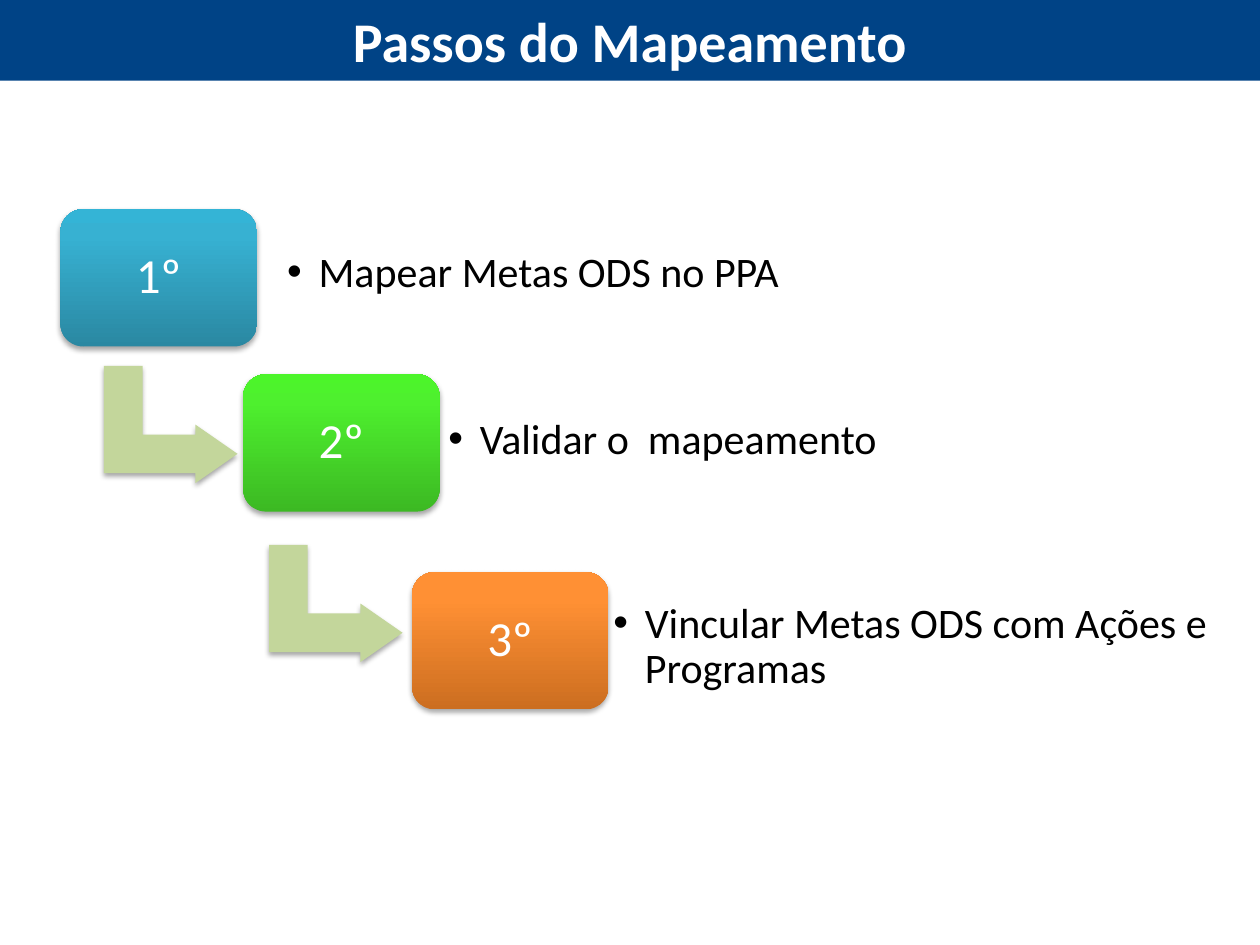
from copy import deepcopy

from pptx import Presentation
from pptx.dml.color import RGBColor
from pptx.enum.shapes import MSO_SHAPE
from pptx.enum.text import MSO_ANCHOR, PP_ALIGN
from pptx.oxml.ns import qn
from pptx.util import Inches, Pt
from lxml import etree

ROUNDED = MSO_SHAPE.ROUNDED_RECTANGLE
BENT_ARROW = MSO_SHAPE.BENT_UP_ARROW
MIDDLE = MSO_ANCHOR.MIDDLE
CENTER = PP_ALIGN.CENTER

WHITE = RGBColor(0xFF, 0xFF, 0xFF)
BLACK = RGBColor(0x00, 0x00, 0x00)
NAVY = RGBColor(0x00, 0x43, 0x86)
SAGE = RGBColor(0xC3, 0xD6, 0x9B)
BLUES = (RGBColor(0x2A, 0x88, 0xA2), RGBColor(0x37, 0xB1, 0xD2), RGBColor(0x34, 0xB4, 0xD6))
GREENS = (RGBColor(0x3C, 0xB9, 0x23), RGBColor(0x4E, 0xF0, 0x2E), RGBColor(0x4C, 0xF5, 0x2A))
ORANGES = (RGBColor(0xCC, 0x6E, 0x20), RGBColor(0xFF, 0x90, 0x34), RGBColor(0xFF, 0x91, 0x36))

FONT = "Calibri"
STOP_POSITIONS = (0, 0.8, 1)
STEPS = [
    ("1º", (0.48, 1.66), BLUES, "Mapear Metas ODS no PPA", (2.18, 1.73, 4.68)),
    ("2º", (1.93, 2.97), GREENS, "Validar o  mapeamento", (3.46, 3.06, 4.74)),
    ("3º", (3.27, 4.54), ORANGES, "Vincular Metas ODS com Ações e Programas", (4.77, 4.7, 4.96)),
]
ARROWS = [(0.89, 2.84), (2.2, 4.26)]


def format_text(shape, size, color, margin, bold=False):
    frame = shape.text_frame
    frame.word_wrap = True
    frame.vertical_anchor = MIDDLE
    frame.margin_left = frame.margin_right = Inches(margin)
    frame.margin_top = frame.margin_bottom = Inches(margin)
    paragraph = frame.paragraphs[0]
    font = paragraph.runs[0].font
    font.name = FONT
    font.size = Pt(size)
    font.bold = bold
    font.color.rgb = color
    return paragraph


def add_soft_shadow(shape):
    shape.shadow.inherit = False
    effects = shape._element.spPr.find(qn("a:effectLst"))
    shadow = etree.SubElement(
        effects, qn("a:outerShdw"), blurRad=str(Pt(3.1)), dist=str(Pt(1.8)),
        dir="5400000", rotWithShape="0")
    color = etree.SubElement(shadow, qn("a:srgbClr"), val="000000")
    etree.SubElement(color, qn("a:alpha"), val="35000")


def fill_gradient(shape, colors):
    fill = shape.fill
    fill.gradient()
    fill.gradient_angle = 90
    stop_list = shape._element.spPr.find(".//" + qn("a:gsLst"))
    stop_list.append(deepcopy(stop_list[-1]))
    for stop, color, position in zip(fill.gradient_stops, colors, STOP_POSITIONS):
        stop.color.rgb = color
        stop.position = position


def set_title(slide, text):
    title = slide.shapes.title
    title.left, title.top = Inches(0), Inches(0)
    title.width, title.height = Inches(10), Inches(0.64)
    title.fill.solid()
    title.fill.fore_color.rgb = NAVY
    title.text_frame.text = text
    format_text(title, 32, WHITE, 0.05, bold=True).alignment = CENTER


def add_arrow(slide, left, top):
    arrow = slide.shapes.add_shape(
        BENT_ARROW, Inches(left), Inches(top), Inches(0.93), Inches(1.06))
    arrow.rotation = 90
    for index, value in enumerate((0.33, 0.25, 0.36)):
        arrow.adjustments[index] = value
    arrow.fill.solid()
    arrow.fill.fore_color.rgb = SAGE
    arrow.line.fill.background()
    add_soft_shadow(arrow)


def add_step_box(slide, number, left, top, colors):
    box = slide.shapes.add_shape(
        ROUNDED, Inches(left), Inches(top), Inches(1.56), Inches(1.09))
    fill_gradient(box, colors)
    box.line.fill.background()
    add_soft_shadow(box)
    box.text_frame.text = number
    paragraph = format_text(box, 28, WHITE, 0.12)
    paragraph.alignment = CENTER
    paragraph.line_spacing = 0.9


def add_description(slide, text, left, top, width):
    description = slide.shapes.add_textbox(
        Inches(left), Inches(top), Inches(width), Inches(0.88))
    description.text_frame.text = text
    paragraph = format_text(description, 24, BLACK, 0.1)
    paragraph.line_spacing = 0.9
    properties = paragraph._p.get_or_add_pPr()
    properties.set("marL", str(Inches(0.25)))
    properties.set("indent", str(Inches(-0.25)))
    etree.SubElement(properties, qn("a:buFont"), typeface="Arial")
    etree.SubElement(properties, qn("a:buChar"), char="•")


def main():
    presentation = Presentation()
    presentation.slide_width = Inches(10)
    presentation.slide_height = Inches(7.5)
    slide = presentation.slides.add_slide(presentation.slide_layouts[5])
    set_title(slide, "Passos do Mapeamento")
    for left, top in ARROWS:
        add_arrow(slide, left, top)
    for number, box_place, colors, text, text_place in STEPS:
        add_step_box(slide, number, *box_place, colors)
        add_description(slide, text, *text_place)
    presentation.save("out.pptx")


if __name__ == "__main__":
    main()
